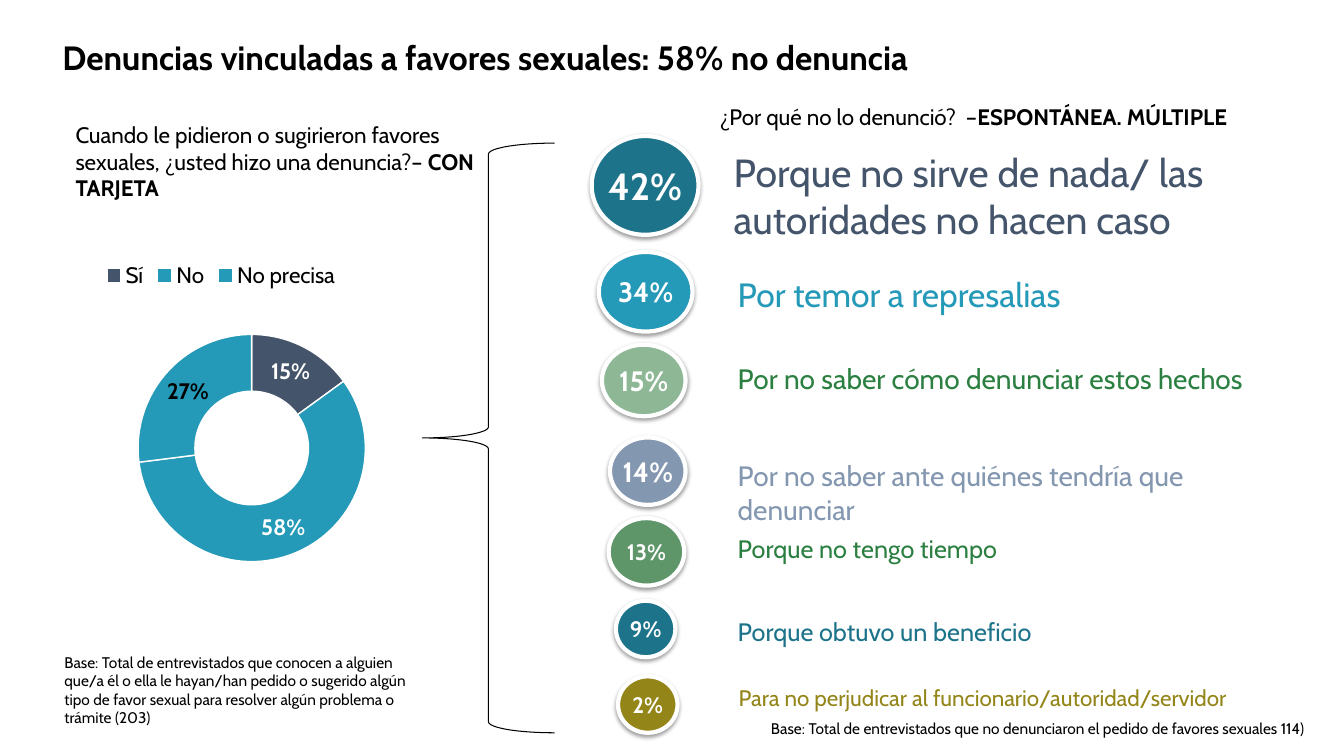
from lxml.etree import SubElement
from pptx import Presentation
from pptx.chart.data import CategoryChartData
from pptx.dml.color import RGBColor
from pptx.enum.chart import XL_CHART_TYPE, XL_LEGEND_POSITION
from pptx.enum.shapes import MSO_SHAPE
from pptx.enum.text import MSO_ANCHOR, PP_ALIGN
from pptx.oxml import parse_xml
from pptx.oxml.ns import nsdecls, qn
from pptx.util import Inches, Pt

FACE, BLACK, WHITE = "Cabin", "000000", "FFFFFF"

# Boxes are left, top, width, height in percent of the slide
NOTES = [
    ((3.9, 4.27, 72.75, 8.13), 24,
     [("Denuncias vinculadas a favores sexuales: 58% no denuncia", True)]),
    ((52.8, 12.93, 41.78, 4.93), 16,
     [("¿Por qué no lo denunció?  –", False), ("ESPONTÁNEA. MÚLTIPLE", True)]),
    ((4.88, 15.33, 31.28, 12.13), 16,
     [("Cuando le pidieron o sugirieron favores sexuales, ¿usted hizo una denuncia?– ", False),
      ("CON TARJETA", True)]),
    ((4.05, 85.73, 27.15, 11.2), 11,
     [("Base: Total de entrevistados que conocen a alguien que/a él o ella le hayan/han "
       "pedido o sugerido algún tipo de favor sexual para resolver algún problema o trámite (203)", False)]),
    ((56.63, 94.4, 43.37, 3.87), 11,
     [("Base: Total de entrevistados que no denunciaron el pedido de favores sexuales 114)", False)]),
]

# value, fill, size, centre and extent of the oval; text, colour, size, box
CAUSES = [
    ("42%", "1C738A", 27, (48, 24.53), (7.95, 13.07),
     "Porque no sirve de nada/ las autoridades no hacen caso", "44546A", 28, (53.85, 18.93, 39.53, 13.87)),
    ("34%", "2599B8", 20, (48.04, 38.6), (6.98, 10.53),
     "Por temor a represalias", "2599B8", 24, (54.15, 35.6, 34.13, 6.67)),
    ("15%", "8DB795", 20, (47.9, 50.33), (6.23, 9.47),
     "Por no saber cómo denunciar estos hechos", "2B8041", 20, (54.15, 47.2, 41.48, 5.87)),
    ("14%", "8497B0", 20, (48.2, 62.33), (5.63, 8.93),
     "Por no saber ante quiénes tendría que denunciar", "8497B0", 20, (54.15, 60, 43.5, 5.87)),
    ("13%", "5E9569", 16, (48.1, 73), (5.63, 8.93),
     "Porque no tengo tiempo", "2B8041", 18, (54.15, 69.87, 36.38, 5.33)),
    ("9%", "1C738A", 16, (48.04, 83.2), (4.43, 7.47),
     "Porque obtuvo un beneficio", "1C738A", 18, (54.15, 80.93, 35.78, 5.33)),
    ("2%", "938518", 16, (48.2, 93.2), (4.43, 7.47),
     "Para no perjudicar al funcionario/autoridad/servidor", "938518", 16, (54.23, 89.87, 38.03, 4.93)),
]

SHARES = [("Sí", 0.15, "44546A"), ("No", 0.58, "2599B8"), ("No precisa", 0.27, "2599B8")]
RING = (-7.8, 28.93, 50.78, 52)
PLOT = {"x": 0.356, "y": 0.167, "w": 0.333, "h": 0.833}
KEY = {"x": 0.3, "y": 0.1}
BRACE = (31.43, 18.93, 9.83, 78)

deck = Presentation()
deck.slide_width, deck.slide_height = Inches(13.33), Inches(7.5)
slide = deck.slides.add_slide(deck.slide_layouts[6])


def place(box):
    sides = (deck.slide_width, deck.slide_height) * 2
    return [round(part * side / 100) for part, side in zip(box, sides)]


def paint(target, color):
    target.rgb = RGBColor.from_string(color)


def fill(target, color):
    target.fill.solid()
    paint(target.fill.fore_color, color)


def edge(line, color, width):
    paint(line.color, color)
    line.width = Pt(width)


def style(font, size, color, bold=False):
    for name, value in {"name": FACE, "size": Pt(size), "bold": bold}.items():
        setattr(font, name, value)
    paint(font.color, color)


def write(box, size, runs, color=BLACK):
    frame = slide.shapes.add_textbox(*place(box)).text_frame
    frame.word_wrap = True
    for text, bold in runs:
        run = frame.paragraphs[0].add_run()
        run.text = text
        style(run.font, size, color, bold)


def shade(shape):
    shape.shadow.inherit = False
    cast = shape._element.spPr.find(qn("a:effectLst"))
    cast.append(parse_xml(
        f'<a:outerShdw {nsdecls("a")} blurRad="{Pt(3.1)}" dist="{Pt(1.6)}" dir="5400000" '
        'rotWithShape="0"><a:srgbClr val="000000"><a:alpha val="38000"/></a:srgbClr></a:outerShdw>'))


def oval(text, color, size, mid, span):
    box = [m - s / 2 for m, s in zip(mid, span)] + list(span)
    shape = slide.shapes.add_shape(MSO_SHAPE.OVAL, *place(box))
    fill(shape, color)
    edge(shape.line, WHITE, 3)
    shade(shape)
    frame = shape.text_frame
    looks = {"margin_left": 0, "margin_right": 0, "vertical_anchor": MSO_ANCHOR.MIDDLE, "word_wrap": True}
    for name, value in looks.items():
        setattr(frame, name, value)
    para = frame.paragraphs[0]
    para.alignment = PP_ALIGN.CENTER
    run = para.add_run()
    run.text = text
    style(run.font, size, WHITE, True)


def pin(node, spots, inner=False):
    old = node.find(qn("c:layout"))
    if old is None:
        old = SubElement(node, qn("c:layout"))
        node.remove(old)
        node.insert(1 if node.tag == qn("c:legend") else 0, old)
    rule = SubElement(old, qn("c:manualLayout"))
    parts = [("layoutTarget", "inner")] if inner else []
    parts += [(axis + "Mode", "edge") for axis in "xy"] + list(spots.items())
    for name, value in parts:
        SubElement(rule, qn("c:" + name)).set("val", str(value))


def ring():
    data = CategoryChartData(number_format="0%")
    data.categories = [name for name, _, _ in SHARES]
    data.add_series("Series 1", [value for _, value, _ in SHARES])
    chart = slide.shapes.add_chart(XL_CHART_TYPE.DOUGHNUT, *place(RING), data).chart
    style(chart.font, 12, BLACK)
    chart.has_title = False
    chart.has_legend = True
    chart.legend.position = XL_LEGEND_POSITION.TOP
    chart.legend.include_in_layout = False
    style(chart.legend.font, 16, BLACK)
    plot = chart.plots[0]
    plot.vary_by_categories = True
    plot._element.find(qn("c:holeSize")).set("val", "55")
    series = plot.series[0]
    for spot, (_, _, color) in enumerate(SHARES):
        part = series.points[spot].format
        fill(part, color)
        edge(part.line, WHITE, 1)
    labels = series.data_labels
    looks = {"show_value": True, "show_percentage": False, "number_format": "0%", "number_format_is_linked": False}
    for name, value in looks.items():
        setattr(labels, name, value)
    style(labels.font, 16, WHITE, True)
    style(series.points[2].data_label.font, 16, BLACK, True)
    pin(chart._chartSpace.chart.plotArea, PLOT, True)
    pin(chart.legend._element, KEY)


for box, size, runs in NOTES:
    write(box, size, runs)
for value, tint, size, mid, span, text, color, scale, box in CAUSES:
    oval(value, tint, size, mid, span)
    write(box, scale, [(text, False)], color)
ring()
brace = slide.shapes.add_shape(MSO_SHAPE.LEFT_BRACE, *place(BRACE))
brace.shadow.inherit = False
brace.fill.background()
edge(brace.line, BLACK, 0.75)
deck.save("out.pptx")
